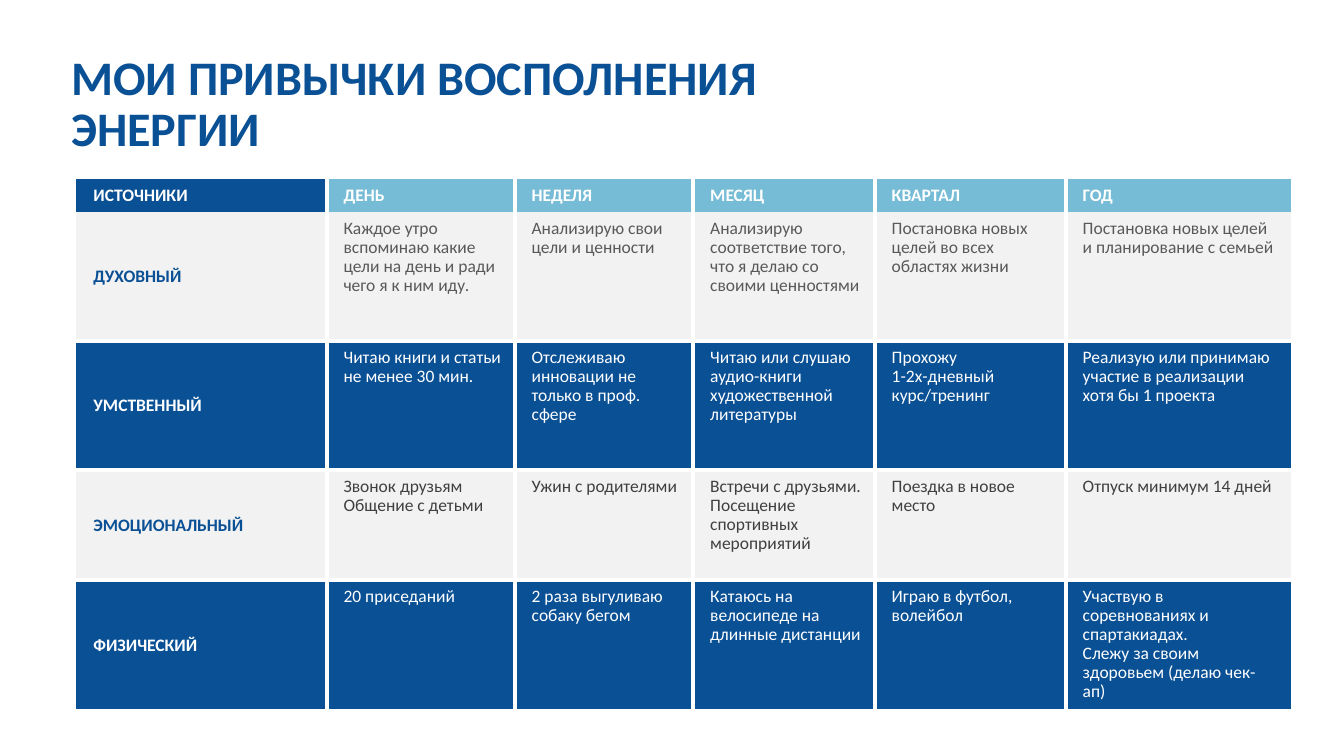
import pptx
import pptx.util
import pptx.dml.color
import pptx.enum.text
import pptx.oxml
import pptx.oxml.ns
from dataclasses import dataclass

Cm, Pt = pptx.util.Cm, pptx.util.Pt
ANCHOR = pptx.enum.text.MSO_ANCHOR


@dataclass(frozen=True)
class Theme:
    face: str = "Calibri"
    navy: str = "0A5095"
    sky: str = "76BCD6"
    pale: str = "F2F2F2"
    white: str = "FFFFFF"
    gray: str = "595959"
    dark: str = "404040"
    head: int = 33
    body: int = 12
    lead: int = 35
    step: int = 13
    rule: int = 3


class Deck:
    def __init__(self, theme, width, height):
        self.theme = theme
        self.file = pptx.Presentation()
        self.file.slide_width, self.file.slide_height = Cm(width), Cm(height)
        self.slide = self.file.slides.add_slide(self.file.slide_layouts[5])

    def apply(self, item, form):
        for name, value in form.items():
            setattr(item, name, value)

    def label(self, frame, text, size, lead, color, bold):
        frame.text = text
        form = {"name": self.theme.face, "size": Pt(size), "bold": bold}
        for para in frame.paragraphs:
            self.apply(para, {"line_spacing": Pt(lead),
                              "alignment": pptx.enum.text.PP_ALIGN.LEFT})
            for run in para.runs:
                self.apply(run.font, form)
                run.font.color.rgb = pptx.dml.color.RGBColor.from_string(color)

    def title(self, text, left, top, width, height):
        box = self.slide.shapes.title
        self.apply(box, {"left": Cm(left), "top": Cm(top),
                         "width": Cm(width), "height": Cm(height)})
        self.apply(box.text_frame, {
            "word_wrap": True, "vertical_anchor": ANCHOR.TOP,
            "auto_size": pptx.enum.text.MSO_AUTO_SIZE.NONE})
        look = self.theme
        self.label(box.text_frame, text, look.head, look.lead, look.navy, True)

    def edges(self, cell, shown):
        props = cell._tc.get_or_add_tcPr()
        space = pptx.oxml.ns.nsdecls("a")
        for side in "LRTB":
            paint = "<a:noFill/>"
            if side in shown:
                paint = (f'<a:solidFill><a:srgbClr val="{self.theme.white}"/>'
                         "</a:solidFill>")
            props.append(pptx.oxml.parse_xml(
                f'<a:ln{side} {space} w="{Pt(self.theme.rule)}">{paint}</a:ln{side}>'))

    def cell(self, cell, text, fill, color, bold, mid, shown):
        self.apply(cell, {
            "margin_left": Cm(0.41), "margin_top": Cm(0.2),
            "margin_right": Cm(0.3), "margin_bottom": Cm(0.13),
            "vertical_anchor": ANCHOR.MIDDLE if mid else ANCHOR.TOP})
        self.edges(cell, shown)
        cell.fill.solid()
        cell.fill.fore_color.rgb = pptx.dml.color.RGBColor.from_string(fill)
        self.label(cell.text_frame, text, self.theme.body, self.theme.step,
                   color, bold)

    def table(self, rows, tones, left, top, widths, heights):
        table = self.slide.shapes.add_table(
            len(rows), len(widths), Cm(left), Cm(top),
            Cm(sum(widths)), Cm(sum(heights))).table
        self.apply(table, {"first_row": False, "horz_banding": False})
        for col, width in zip(table.columns, widths):
            col.width = Cm(width)
        for row, height in zip(table.rows, heights):
            row.height = Cm(height)
        for r, (texts, tone) in enumerate(zip(rows, tones)):
            for c, text in enumerate(texts):
                first = c == 0
                fill, color = tone[:2] if first else tone[2:]
                # White rules between cells, none under the header
                shown = (("" if first else "L")
                         + ("R" if c < len(widths) - 1 else "")
                         + ("T" if r > 1 else "")
                         + ("B" if 0 < r < len(rows) - 1 else ""))
                self.cell(table.cell(r, c), text, fill, color,
                          first or r == 0, first or r == 0, shown)


ROWS = [
    ["ИСТОЧНИКИ", "ДЕНЬ", "НЕДЕЛЯ", "МЕСЯЦ", "КВАРТАЛ", "ГОД"],
    ["ДУХОВНЫЙ",
     "Каждое утро вспоминаю какие цели на день и ради чего я к ним иду.",
     "Анализирую свои цели и ценности",
     "Анализирую соответствие того, что я делаю со своими ценностями",
     "Постановка новых целей во всех областях жизни",
     "Постановка новых целей и планирование с семьей"],
    ["УМСТВЕННЫЙ",
     "Читаю книги и статьи не менее 30 мин.",
     "Отслеживаю инновации не только в проф. сфере",
     "Читаю или слушаю аудио-книги художественной литературы",
     "Прохожу\v1-2х-дневный курс/тренинг",
     "Реализую или принимаю участие в реализации хотя бы 1 проекта"],
    ["ЭМОЦИОНАЛЬНЫЙ",
     "Звонок друзьям\nОбщение с детьми",
     "Ужин с родителями",
     "Встречи с друзьями.\nПосещение спортивных мероприятий",
     "Поездка в новое место",
     "Отпуск минимум 14 дней"],
    ["ФИЗИЧЕСКИЙ",
     "20 приседаний",
     "2 раза выгуливаю собаку бегом",
     "Катаюсь на велосипеде на длинные дистанции",
     "Играю в футбол, волейбол",
     "Участвую в соревнованиях и спартакиадах.\n"
     "Слежу за своим здоровьем (делаю чек-ап)"],
]


def main():
    look = Theme()
    deck = Deck(look, 32.51, 18.29)

    # Title
    deck.title("МОИ ПРИВЫЧКИ ВОСПОЛНЕНИЯ ЭНЕРГИИ", 1.47, 1.17, 18.01, 2.74)

    # Habit table: label fill and text, then cell fill and text
    blue = (look.navy, look.white, look.navy, look.white)
    tones = [
        (look.navy, look.white, look.sky, look.white),
        (look.pale, look.navy, look.pale, look.gray),
        blue,
        (look.pale, look.navy, look.pale, look.dark),
        blue,
    ]
    deck.table(ROWS, tones, 1.85, 4.34,
               [6.05, 4.55, 4.32, 4.39, 4.62, 5.44],
               [0.76, 3.12, 3.12, 2.67, 3.12])

    deck.file.save("out.pptx")


if __name__ == "__main__":
    main()
